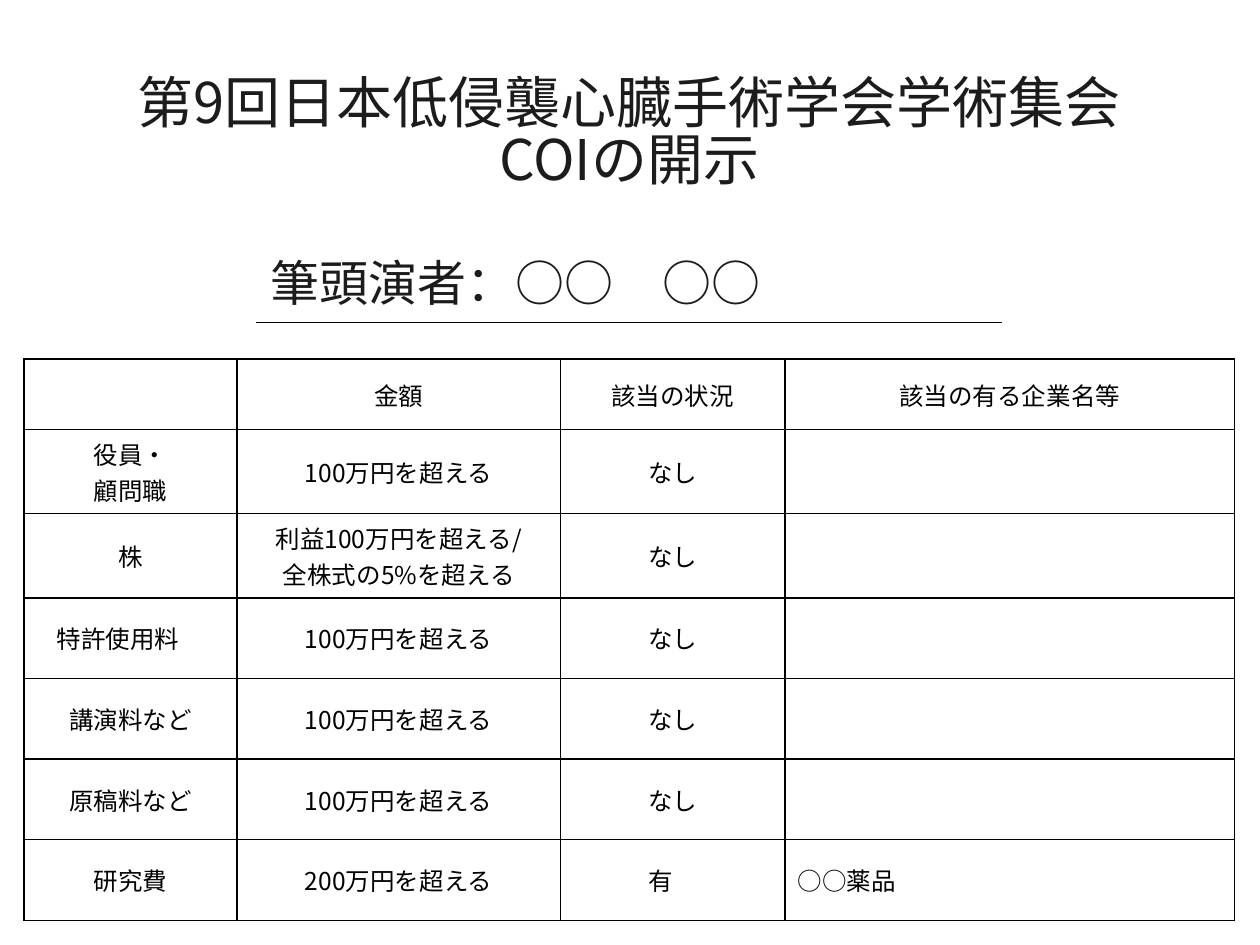
from dataclasses import dataclass

from lxml import etree
from pptx import Presentation
from pptx.dml.color import RGBColor
from pptx.enum.shapes import MSO_CONNECTOR
from pptx.enum.text import MSO_ANCHOR, PP_ALIGN
from pptx.oxml.ns import qn
from pptx.util import Inches, Pt

LEFT, CENTER = PP_ALIGN.LEFT, PP_ALIGN.CENTER
MIDDLE = MSO_ANCHOR.MIDDLE
STRAIGHT = MSO_CONNECTOR.STRAIGHT


@dataclass(frozen=True)
class Theme:
    font: str = "Noto Sans CJK JP"
    heading: str = "1C1C1C"
    black: str = "000000"
    title_size: int = 32
    speaker_size: int = 28
    cell_size: int = 14
    line_width: int = 1


@dataclass(frozen=True)
class TextBlock:
    box: tuple[float, float, float, float]
    paragraphs: tuple[str, ...]
    size: int
    align: PP_ALIGN
    spacing: float


@dataclass(frozen=True)
class Disclosure:
    item: str
    amount: str
    status: str = "なし"
    company: str = ""


THEME = Theme()
OVER_MILLION = "100万円を超える"
TEXTS = (
    TextBlock((0.49, 0.48, 9.01, 1.18),
              ("第9回日本低侵襲心臓手術学会学術集会", "COIの開示"),
              THEME.title_size, CENTER, 0.84),
    TextBlock((2.05, 1.95, 5.94, 0.57), ("筆頭演者：○○\u3000○○",),
              THEME.speaker_size, LEFT, 1.0),
)
COLUMNS = (1.69, 2.57, 1.78, 3.57)
HEADER_HEIGHT, ROW_HEIGHT = 0.56, 0.64
DISCLOSURES = (
    Disclosure("", "金額", "該当の状況", "該当の有る企業名等"),
    Disclosure("役員・\n顧問職", OVER_MILLION),
    Disclosure("株", "利益100万円を超える/\n全株式の5%を超える"),
    Disclosure("特許使用料\u3000", OVER_MILLION),
    Disclosure("講演料など", OVER_MILLION),
    Disclosure("原稿料など", OVER_MILLION),
    Disclosure("研究費", "200万円を超える", "有\u3000", "○○薬品"),
)


def add_text(p, text: str, size: int, color: str, align: PP_ALIGN) -> None:
    p.alignment = align
    for i, line in enumerate(text.split("\n")):
        if i:
            p.add_line_break()
        r = p.add_run()
        r.text = line
        r.font.size = Pt(size)
        r.font.name = THEME.font
        r.font.color.rgb = RGBColor.from_string(color)
        ea = etree.SubElement(r.font._element, qn("a:ea"))
        ea.set("typeface", THEME.font)


def add_block(s, block: TextBlock) -> None:
    tf = s.shapes.add_textbox(*map(Inches, block.box)).text_frame
    tf.word_wrap = True
    tf.vertical_anchor = MIDDLE
    for i, text in enumerate(block.paragraphs):
        p = tf.add_paragraph() if i else tf.paragraphs[0]
        p.line_spacing = block.spacing
        add_text(p, text, block.size, THEME.heading, block.align)


def add_borders(cell) -> None:
    tc_pr = cell._tc.get_or_add_tcPr()
    for i, side in enumerate(("lnL", "lnR", "lnT", "lnB")):
        ln = etree.Element(qn(f"a:{side}"), w=str(Pt(THEME.line_width)))
        fill = etree.SubElement(ln, qn("a:solidFill"))
        etree.SubElement(fill, qn("a:srgbClr"), val=THEME.black)
        tc_pr.insert(i, ln)


def add_disclosures(s) -> None:
    heights = [HEADER_HEIGHT] + [ROW_HEIGHT] * (len(DISCLOSURES) - 1)
    table = s.shapes.add_table(
        len(heights), len(COLUMNS), Inches(0.19), Inches(2.85),
        Inches(sum(COLUMNS)), Inches(sum(heights))).table
    table.first_row = table.horz_banding = False
    for column, width in zip(table.columns, COLUMNS):
        column.width = Inches(width)
    for i, (row, entry) in enumerate(zip(table.rows, DISCLOSURES)):
        row.height = Inches(heights[i])
        texts = (entry.item, entry.amount, entry.status, entry.company)
        for j, (cell, text) in enumerate(zip(row.cells, texts)):
            cell.vertical_anchor = MIDDLE
            cell.fill.background()
            add_borders(cell)
            if text:
                align = LEFT if i and j == len(COLUMNS) - 1 else CENTER
                add_text(cell.text_frame.paragraphs[0], text,
                         THEME.cell_size, THEME.black, align)


def add_underline(s) -> None:
    line = s.shapes.add_connector(
        STRAIGHT, Inches(2.03), Inches(2.56), Inches(7.95), Inches(2.56))
    line.line.color.rgb = RGBColor.from_string(THEME.black)
    line.line.width = Pt(THEME.line_width)
    etree.SubElement(line._element.spPr, qn("a:effectLst"))


def main() -> None:
    """Build the conflict-of-interest disclosure slide."""
    prs = Presentation()
    prs.slide_width, prs.slide_height = Inches(10), Inches(7.5)
    s = prs.slides.add_slide(prs.slide_layouts[6])
    add_disclosures(s)
    add_underline(s)
    for block in TEXTS:
        add_block(s, block)
    prs.save("out.pptx")


if __name__ == "__main__":
    main()
